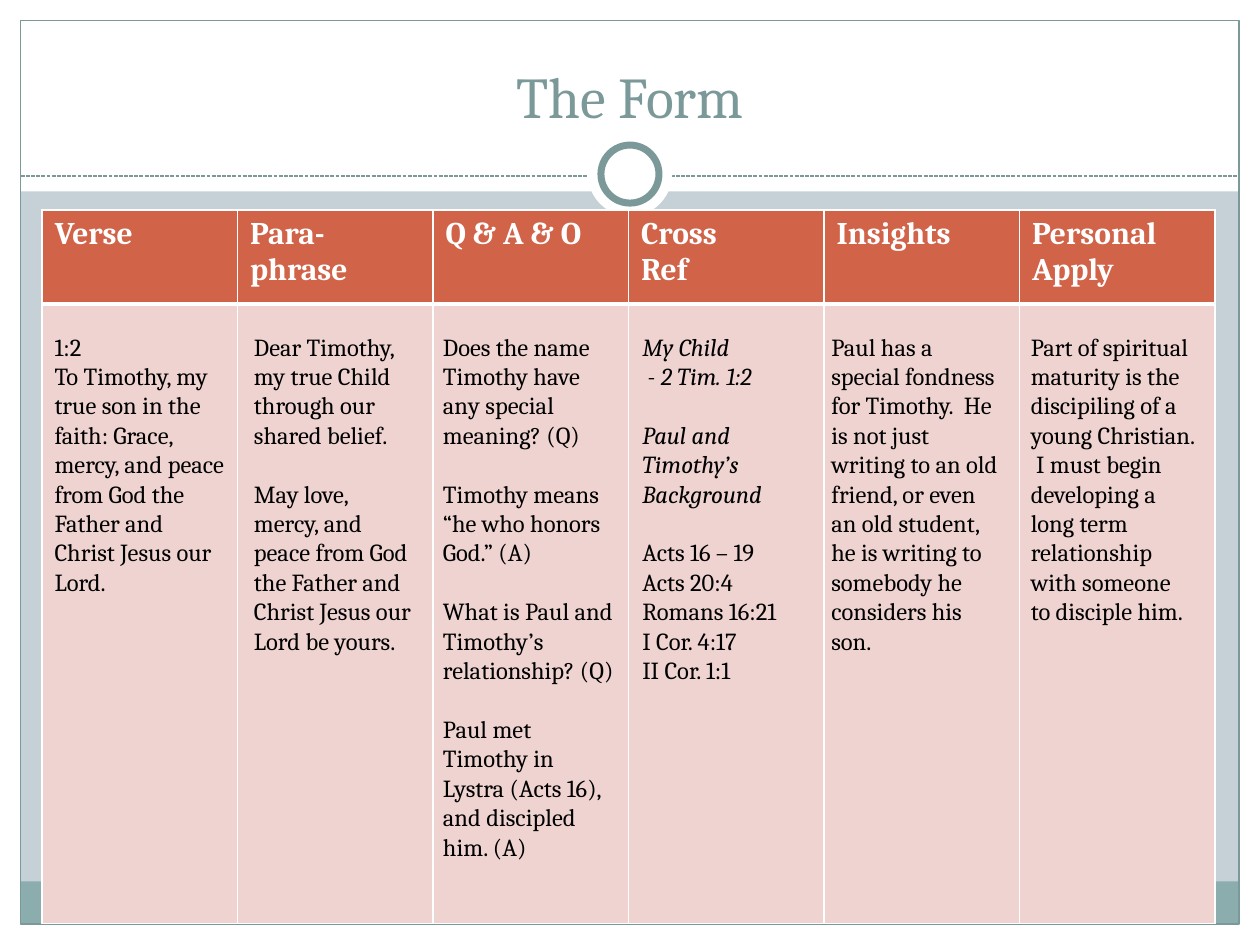
import itertools

import pptx
import pptx.dml.color
import pptx.enum.dml
import pptx.enum.shapes
import pptx.enum.text
import pptx.oxml
import pptx.oxml.ns
import pptx.util

Cm = pptx.util.Cm
Pt = pptx.util.Pt
FONT = "Cambria"
WHITE, SLATE, TEAL, MIST = "FFFFFF", "7C999A", "8CADAE", "C5D1D7"
RUST, BLUSH, BLACK = "D16349", "EED3D0", "000000"
HEADINGS = [["Verse"], ["Para-phrase"], ["Q & A & O"], ["Cross", "Ref"],
            ["Insights"], ["Personal", "Apply"]]
GAP = Pt(16.8)
NOTE_WIDTHS = [4.02, 3.81] * 3
NOTES = [
    [["1:2", "To Timothy, my true son in the faith: Grace, mercy, and peace "
      "from God the Father and Christ Jesus our Lord."]],
    [["Dear Timothy, my true Child through our shared belief."],
     ["May love, mercy, and peace from God the Father and Christ Jesus our "
      "Lord be yours."]],
    [["Does the name Timothy have any special meaning? (Q)"],
     ["Timothy means “he who honors God.” (A)"],
     ["What is Paul and Timothy’s relationship? (Q)"],
     ["Paul met Timothy in Lystra (Acts 16), and discipled him. (A)"]],
    [["My Child", " - 2 Tim. 1:2"],
     ["Paul and Timothy’s Background"],
     ["Acts 16 – 19", "Acts 20:4", "Romans 16:21", "I Cor. 4:17", "II Cor. 1:1"]],
    [["Paul has a special fondness for Timothy.  He is not just writing to an "
      "old friend, or even an old student, he is writing to somebody he "
      "considers his son."]],
    [["Part of spiritual maturity is the discipiling of a young Christian.  I "
      "must begin developing a long term relationship with someone to "
      "disciple him."]],
]
ITALIC_GROUPS = {(3, 0), (3, 1)}


def color(hex_string):
    """Return the colour for a hex string."""
    return pptx.dml.color.RGBColor.from_string(hex_string)


def add_run(paragraph, text, size, hex_string, bold=False, italic=False):
    """Add one formatted run to a paragraph."""
    run = paragraph.add_run()
    run.text = text
    run.font.name = FONT
    run.font.size = Pt(size)
    run.font.bold = bold
    run.font.italic = italic
    run.font.color.rgb = color(hex_string)


def next_paragraph(text_frame, index):
    """Return the first paragraph for index 0, otherwise a new one."""
    return text_frame.add_paragraph() if index else text_frame.paragraphs[0]


def add_panel(slide, kind, box, fill=None, line=None, line_width=0.75):
    """Add a flat preset shape in a box given in centimetres."""
    shape = slide.shapes.add_shape(kind, *map(Cm, box))
    shape.shadow.inherit = False
    if fill:
        shape.fill.solid()
        shape.fill.fore_color.rgb = color(fill)
    else:
        shape.fill.background()
    if line:
        shape.line.color.rgb = color(line)
        shape.line.width = Pt(line_width)
    else:
        shape.line.fill.background()


def add_frame(slide, box):
    """Draw the page border, header band, footer band and ring."""
    left, top, width, height = box
    margin, header, footer = 0.42, 3.86, 0.86
    right, bottom = left + width - margin, top + height - margin
    inner_width, inner_height = width - 2 * margin, height - 2 * margin
    rectangle = pptx.enum.shapes.MSO_SHAPE.RECTANGLE
    for band in [(left, bottom, width, margin), (left, top, width, header),
                 (left, top, margin, height), (right, top, margin, height)]:
        add_panel(slide, rectangle, band, WHITE)
    add_panel(slide, rectangle, (left + margin, bottom - footer, inner_width, footer), TEAL)
    add_panel(slide, rectangle, (left + margin, top + margin, inner_width, inner_height),
              line=SLATE)

    rule_y = Cm(top + 3.55)
    rule = slide.shapes.add_connector(pptx.enum.shapes.MSO_CONNECTOR.STRAIGHT,
                                      Cm(left + margin), rule_y, Cm(right), rule_y)
    rule.line.color.rgb = color(SLATE)
    rule.line.width = Pt(0.75)
    rule.line.dash_style = pptx.enum.dml.MSO_LINE.SQUARE_DOT
    properties = rule._element.spPr
    properties.append(pptx.oxml.parse_xml(f"<a:effectLst {pptx.oxml.ns.nsdecls('a')}/>"))

    center_x, center_y = left + width / 2, top + 3.51
    for diameter, line in [(1.7, None), (1.17, SLATE)]:
        ring = (center_x - diameter / 2, center_y - diameter / 2, diameter, diameter)
        add_panel(slide, pptx.enum.shapes.MSO_SHAPE.OVAL, ring, WHITE, line, 4)


def add_title(slide, box, text):
    """Place the title placeholder in front of the frame."""
    title = slide.shapes.title
    slide.shapes._spTree.append(title._element)
    title.left, title.top, title.width, title.height = map(Cm, box)
    text_frame = title.text_frame
    text_frame.auto_size = pptx.enum.text.MSO_AUTO_SIZE.NONE
    text_frame.vertical_anchor = pptx.enum.text.MSO_ANCHOR.BOTTOM
    paragraph = text_frame.paragraphs[0]
    paragraph.alignment = pptx.enum.text.PP_ALIGN.CENTER
    add_run(paragraph, text, 33, SLATE)


def style_cell(cell, fill, borders):
    """Fill a cell and draw its borders from side and width pairs."""
    properties = cell._tc.get_or_add_tcPr()
    for side, width in borders.items():
        properties.append(pptx.oxml.parse_xml(
            f'<a:{side} {pptx.oxml.ns.nsdecls("a")} w="{Pt(width)}"><a:solidFill>'
            f'<a:srgbClr val="{WHITE}"/></a:solidFill></a:{side}>'))
    cell.fill.solid()
    cell.fill.fore_color.rgb = color(fill)


def add_form_table(slide, box):
    """Add the table with a heading row and an open row."""
    header_height = 1.9
    table = slide.shapes.add_table(2, len(HEADINGS), *map(Cm, box)).table
    table.rows[0].height = Cm(header_height)
    table.rows[1].height = Cm(box[3] - header_height)
    for index, lines in enumerate(HEADINGS):
        table.columns[index].width = Cm(box[2] / len(HEADINGS))
        heading, body = table.cell(0, index), table.cell(1, index)
        style_cell(heading, RUST, {"lnL": 1, "lnR": 1, "lnT": 1, "lnB": 3})
        style_cell(body, BLUSH, {"lnL": 1, "lnR": 1, "lnT": 3, "lnB": 1})
        for line_index, line in enumerate(lines):
            paragraph = next_paragraph(heading.text_frame, line_index)
            add_run(paragraph, line, 18, WHITE, bold=True)


def add_note(slide, box, column, groups):
    """Add one column's text, with a gap between its groups."""
    text_frame = slide.shapes.add_textbox(*map(Cm, box)).text_frame
    text_frame.word_wrap = True
    count = 0
    for group_index, lines in enumerate(groups):
        for line_index, line in enumerate(lines):
            paragraph = next_paragraph(text_frame, count)
            if group_index and not line_index:
                paragraph.space_before = GAP
            italic = (column, group_index) in ITALIC_GROUPS
            add_run(paragraph, line, 14, BLACK, italic=italic)
            count += 1


def add_notes(slide, box):
    """Set the column texts side by side across the box."""
    left, top, _, height = box
    edges = itertools.accumulate(NOTE_WIDTHS, initial=left)
    for column, (edge, width, groups) in enumerate(zip(edges, NOTE_WIDTHS, NOTES)):
        add_note(slide, (edge, top, width, height), column, groups)


def main():
    """Build and save the slide."""
    presentation = pptx.Presentation()
    presentation.slide_width, presentation.slide_height = Cm(25.4), Cm(19.05)
    slide = presentation.slides.add_slide(presentation.slide_layouts[5])
    slide.background.fill.solid()
    slide.background.fill.fore_color.rgb = color(MIST)
    add_frame(slide, (0, 0, 25.4, 19.05))
    add_title(slide, (0.85, 0.64, 23.7, 2.1), "The Form")
    add_form_table(slide, (0.85, 4.23, 23.64, 14.39))
    add_notes(slide, (0.85, 6.56, sum(NOTE_WIDTHS), 12.2))
    presentation.save("out.pptx")


if __name__ == "__main__":
    main()
